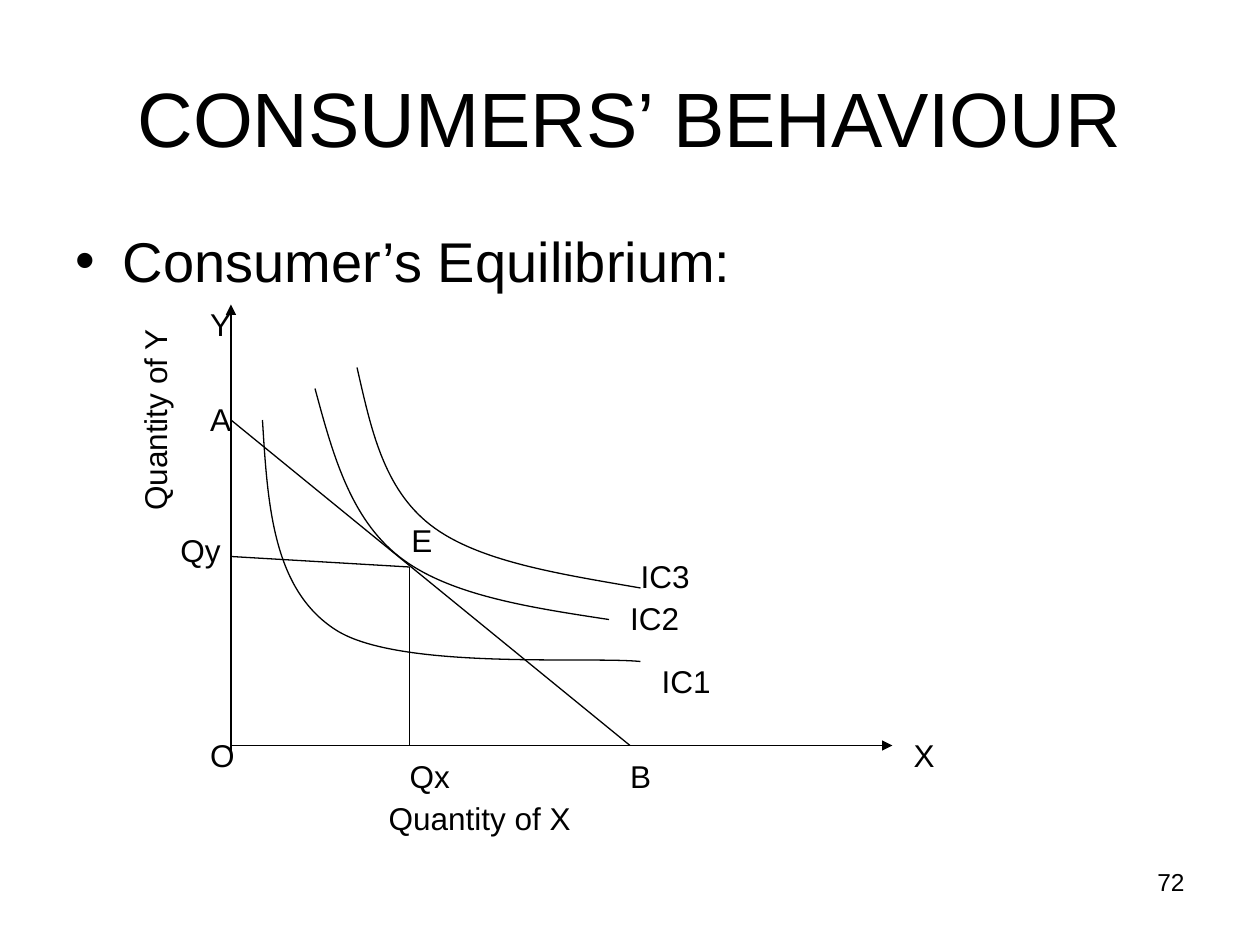
from lxml import etree
from pptx import Presentation
from pptx.dml.color import RGBColor
from pptx.enum import shapes, text
from pptx.oxml import ns
from pptx.util import Pt

BLACK = RGBColor(0, 0, 0)
WHITE = RGBColor(255, 255, 255)
FONT = "Arial"
ALIGN = text.PP_ALIGN

LINES = [
    ((0, 252), (378, 252), True),
    ((0, 258), (0, 0), True),
    ((0, 66), (228, 252), False),
    ((102, 150), (102, 252), False),
    ((102, 150), (0, 144), False),
]
CURVES = [
    [(48, 48), (58, 85), (68, 122), (96, 144), (124, 166), (170, 173), (216, 180)],
    [(18, 66), (21, 115), (24, 163), (60, 186), (96, 209), (204, 201), (234, 204)],
    [(72, 36), (80, 71), (87, 105), (114, 126), (141, 147), (188, 154), (234, 162)],
]
LABELS = [
    ("E", 96, 120, 27), ("IC1", 239, 201, 43), ("IC2", 221, 165, 43),
    ("IC3", 227, 141, 43), ("A", -19, 51, 27), ("B", 221, 255, 27),
    ("X", 383, 243, 27), ("O", -19, 243, 29), ("Y", -19, -3, 27),
    ("Qx", 95, 255, 38), ("Qy", -36, 126, 38), ("Quantity of X", 83, 279, 119),
]


def write(slide, words, box, size=18, align=ALIGN.LEFT, anchor=text.MSO_ANCHOR.TOP,
          wrap=True, turn=0, bullet=False):
    shape = slide.shapes.add_textbox(*map(Pt, box))
    shape.rotation = turn
    frame = shape.text_frame
    frame.word_wrap = wrap
    if not wrap:
        frame.auto_size = text.MSO_AUTO_SIZE.SHAPE_TO_FIT_TEXT
    frame.vertical_anchor = anchor
    para = frame.paragraphs[0]
    para.alignment = align
    run = para.add_run()
    run.text = words
    run.font.name = FONT
    run.font.size = Pt(size)
    run.font.color.rgb = BLACK
    if bullet:
        para.space_before = Pt(size * 0.2)
        props = para._p.get_or_add_pPr()
        props.set("marL", str(Pt(27)))
        props.set("indent", str(Pt(-27)))
        etree.SubElement(props, ns.qn("a:buFont")).set("typeface", FONT)
        etree.SubElement(props, ns.qn("a:buChar")).set("char", "•")


def draw_line(slide, start, end, arrow):
    line = slide.shapes.add_connector(
        shapes.MSO_CONNECTOR.STRAIGHT, *map(Pt, start + end))
    line.line.color.rgb = BLACK
    line.line.width = Pt(0.75)
    if arrow:
        tip = etree.SubElement(line.line._get_or_add_ln(), ns.qn("a:tailEnd"))
        tip.set("type", "triangle")
    etree.SubElement(line._element.spPr, ns.qn("a:effectLst"))


def draw_curve(slide, knots):
    form = slide.shapes.build_freeform(*knots[0], scale=Pt(1))
    form.add_line_segments(knots[1:], close=False)
    curve = form.convert_to_shape()
    route = curve._element.find(".//" + ns.qn("a:path"))
    steps = route.findall(ns.qn("a:lnTo"))
    for i in range(0, len(steps), 3):
        bend = etree.SubElement(route, ns.qn("a:cubicBezTo"))
        for step in steps[i:i + 3]:
            bend.append(step[0])
            route.remove(step)
    curve.shadow.inherit = False
    curve.fill.background()
    curve.line.color.rgb = BLACK
    curve.line.width = Pt(0.75)


def draw_graph(slide, left, top):
    def shift(point):
        return left + point[0], top + point[1]

    for start, end, arrow in LINES:
        draw_line(slide, shift(start), shift(end), arrow)
    for knots in CURVES:
        draw_curve(slide, [shift(knot) for knot in knots])
    for words, x, y, width in LABELS:
        write(slide, words, (*shift((x, y)), width, 29), wrap=False)
    write(slide, "Quantity of Y", (*shift((-103, 51)), 119, 29), wrap=False, turn=270)


def draw_head(slide, left, top, width):
    write(slide, "CONSUMERS’ BEHAVIOUR", (left, top, width, 90), size=44,
          align=ALIGN.CENTER, anchor=text.MSO_ANCHOR.MIDDLE)
    write(slide, "Consumer’s Equilibrium:", (left, top + 104.4, width, 356.4),
          size=32, bullet=True)


def main():
    deck = Presentation()
    deck.slide_width, deck.slide_height = Pt(720), Pt(540)
    slide = deck.slides.add_slide(deck.slide_layouts[6])
    slide.background.fill.solid()
    slide.background.fill.fore_color.rgb = WHITE
    draw_head(slide, 36, 21.6, 648)
    draw_graph(slide, 132, 174)
    write(slide, "72", (516, 492, 168, 37.5), size=14, align=ALIGN.RIGHT)
    deck.save("out.pptx")


if __name__ == "__main__":
    main()
